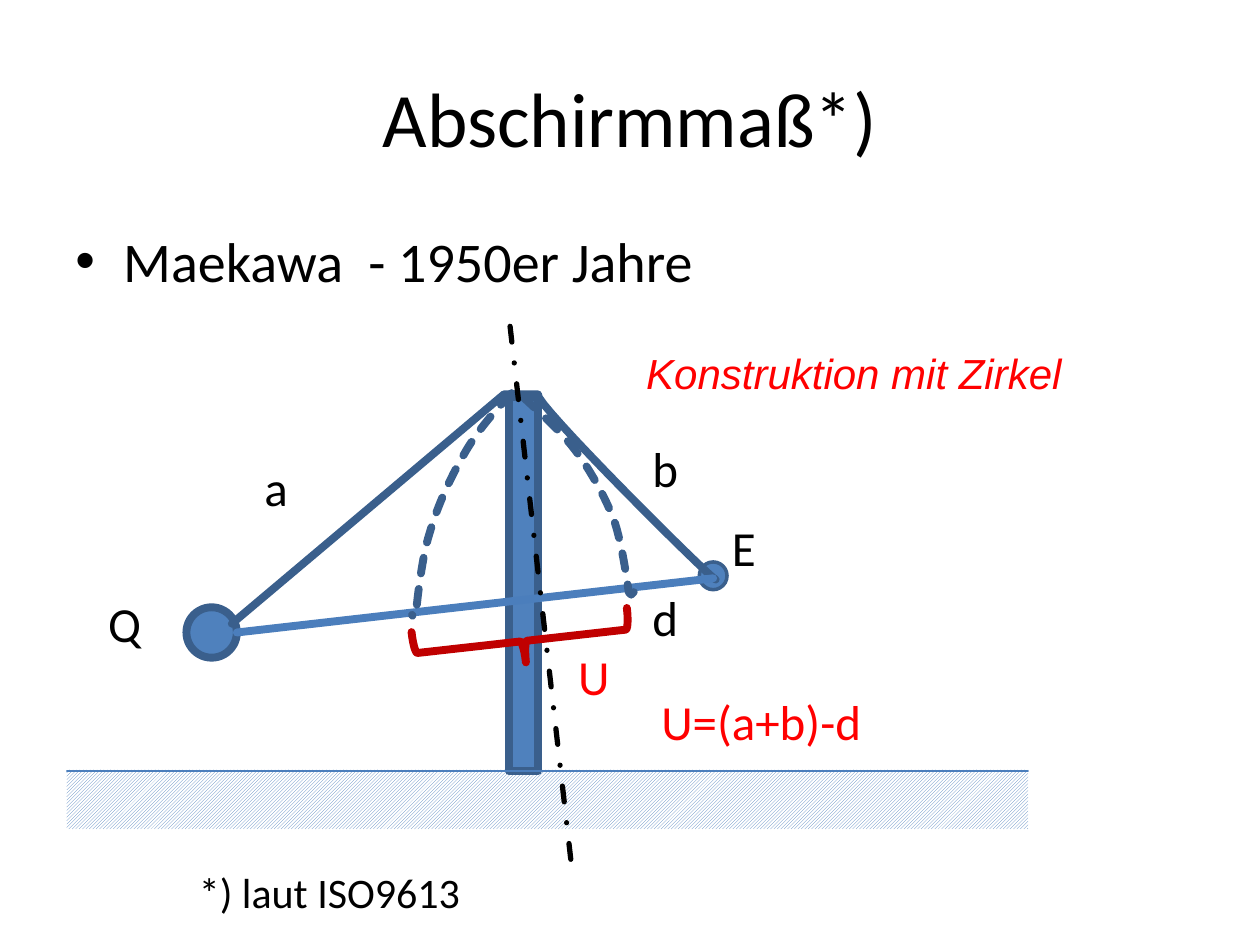
from lxml import etree
from pptx import Presentation
from pptx.dml.color import RGBColor
from pptx.enum import dml, shapes, text
from pptx.oxml import ns
from pptx.util import Inches, Pt

BLACK = RGBColor(0x00, 0x00, 0x00)
WHITE = RGBColor(0xFF, 0xFF, 0xFF)
RED = RGBColor(0xFF, 0x00, 0x00)
DARK_RED = RGBColor(0xC0, 0x00, 0x00)
BLUE = RGBColor(0x4F, 0x81, 0xBD)
LINE_BLUE = RGBColor(0x4B, 0x7E, 0xBC)
EDGE_BLUE = RGBColor(0x3A, 0x5F, 0x8C)

CURVE_STEPS = 16

LABELS = [  # text, left, top, width, format values
    ("Q", 0.76, 4.59, 0.67, {}),
    ("E", 5.71, 3.99, 0.54, {}),
    ("a", 2.0, 3.51, 0.67, {}),
    ("b", 5.08, 3.36, 0.67, {}),
    ("d", 5.08, 4.54, 0.67, {}),
    ("U", 4.49, 5.01, 0.67, {"color": RED}),
    ("U=(a+b)-d", 5.15, 5.37, 2.28, {"color": RED}),
    ("Konstruktion mit Zirkel", 5.03, 2.65, 4.48,
     {"color": RED, "size": 24, "name": "Arial", "italic": True}),
    ("*) laut ISO9613", 1.48, 6.77, 4.48, {"size": 24}),
]

# Each path is a start point followed by segments: one point is a straight
# line, three points are a Bézier curve.
SOUND_PATH = [(1.84, 4.95), [(4, 3.13)], [(4.27, 3.13)],
              [(4.22, 3.18), (5.64, 4.59), (5.68, 4.6)]]
RIGHT_ARC = [(4.15, 3.15), [(4.3, 3.29), (4.45, 3.42), (4.57, 3.58)],
             [(4.69, 3.74), (4.8, 3.94), (4.87, 4.12)],
             [(4.94, 4.31), (4.99, 4.7), (4.99, 4.7)],
             [(5.01, 4.72)], [(5.03, 4.7)]]
LEFT_ARC = [(4.06, 3.12), [(3.92, 3.27), (3.78, 3.43), (3.68, 3.61)],
            [(3.57, 3.8), (3.47, 4.02), (3.41, 4.23)],
            [(3.34, 4.44), (3.3, 4.88), (3.3, 4.88)],
            [(3.28, 4.9)], [(3.27, 4.88)]]


def style_line(line, color, width, dash=None):
    """Colour a line and give it round caps and joins."""
    line.color.rgb = color
    line.width = Pt(width)
    if dash:
        line.dash_style = dash
    ln = line._get_or_add_ln()
    ln.set("cap", "rnd")
    etree.SubElement(ln, ns.qn("a:round"))


def add_text(slide, content, left, top, width, height, size=28,
             color=BLACK, name="Calibri", italic=None):
    """Add a one-paragraph text box and return its frame and paragraph."""
    box = slide.shapes.add_textbox(*map(Inches, (left, top, width, height)))
    frame = box.text_frame
    frame.word_wrap = True
    paragraph = frame.paragraphs[0]
    run = paragraph.add_run()
    run.text = content
    for key, value in {"size": Pt(size), "name": name, "italic": italic}.items():
        setattr(run.font, key, value)
    run.font.color.rgb = color
    return frame, paragraph


def add_title(slide, content):
    frame, paragraph = add_text(slide, content, 0.5, 0.3, 9, 1.25, size=44)
    frame.vertical_anchor = text.MSO_ANCHOR.MIDDLE
    paragraph.alignment = text.PP_ALIGN.CENTER


def add_bullet(slide, content):
    _, paragraph = add_text(slide, content, 0.5, 1.75, 9, 4.95, size=32)
    paragraph.space_before = Pt(6.4)
    properties = paragraph._p.get_or_add_pPr()
    properties.set("marL", str(Inches(0.38)))
    properties.set("indent", str(Inches(-0.38)))
    etree.SubElement(properties, ns.qn("a:buFont"), typeface="Arial")
    etree.SubElement(properties, ns.qn("a:buChar"), char="•")


def add_label(slide, content, left, top, width, formats):
    _, paragraph = add_text(slide, content, left, top, width, 0.7, **formats)
    paragraph.line_spacing = 1.15
    paragraph.space_after = Pt(10)


def add_solid(slide, kind, left, top, width, height, edge=4.5):
    solid = slide.shapes.add_shape(kind, *map(Inches, (left, top, width, height)))
    solid.shadow.inherit = False
    solid.fill.solid()
    solid.fill.fore_color.rgb = BLUE
    style_line(solid.line, EDGE_BLUE, edge)


def add_ground(slide):
    ground = slide.shapes.add_shape(
        shapes.MSO_SHAPE.RECTANGLE, *map(Inches, (0.53, 6.11, 7.63, 0.47)))
    ground.shadow.inherit = False
    ground.fill.patterned()
    ground.fill.pattern = dml.MSO_PATTERN.DARK_UPWARD_DIAGONAL
    ground.fill.fore_color.rgb = BLUE
    ground.fill.back_color.rgb = WHITE
    ground.line.fill.background()


def add_line(slide, start, end, color, width, dash=None):
    connector = slide.shapes.add_connector(
        shapes.MSO_CONNECTOR.STRAIGHT, *map(Inches, (*start, *end)))
    style_line(connector.line, color, width, dash)
    etree.SubElement(connector._element.spPr, ns.qn("a:effectLst"))


def bezier(p0, p1, p2, p3):
    """Return points along a cubic curve, without its start."""
    points = []
    for step in range(1, CURVE_STEPS + 1):
        t = step / CURVE_STEPS
        s = 1 - t
        points.append(tuple(
            s**3 * a + 3 * s * s * t * b + 3 * s * t * t * c + t**3 * d
            for a, b, c, d in zip(p0, p1, p2, p3)))
    return points


def add_curve(slide, path, dash=None):
    start, *segments = path
    points = [start]
    for segment in segments:
        points += bezier(points[-1], *segment) if len(segment) == 3 else segment
    corners = [(Inches(x), Inches(y)) for x, y in points]
    builder = slide.shapes.build_freeform(*corners[0])
    builder.add_line_segments(corners[1:], close=False)
    curve = builder.convert_to_shape()
    curve.shadow.inherit = False
    curve.fill.background()
    style_line(curve.line, EDGE_BLUE, 4.5, dash)


def add_detour_brace(slide):
    brace = slide.shapes.add_shape(
        shapes.MSO_SHAPE.RIGHT_BRACE, *map(Inches, (3.97, 4.23, 0.34, 1.72)))
    brace.rotation = 83.6
    brace.adjustments[0] = 0.083
    brace.adjustments[1] = 0.491
    brace.shadow.inherit = False
    brace.fill.background()
    style_line(brace.line, DARK_RED, 4.5)


def main():
    prs = Presentation()
    prs.slide_width, prs.slide_height = Inches(10), Inches(7.5)
    slide = prs.slides.add_slide(prs.slide_layouts[6])

    add_ground(slide)
    add_title(slide, "Abschirmmaß*)")
    add_bullet(slide, "Maekawa  - 1950er Jahre")

    add_solid(slide, shapes.MSO_SHAPE.RECTANGLE, 4.04, 3.15, 0.23, 2.97)
    add_line(slide, (0.53, 6.12), (8.16, 6.12), LINE_BLUE, 0.75)
    add_solid(slide, shapes.MSO_SHAPE.OVAL, 1.48, 4.82, 0.4, 0.4)
    add_solid(slide, shapes.MSO_SHAPE.OVAL, 5.55, 4.46, 0.22, 0.22, edge=2)

    add_curve(slide, SOUND_PATH)
    add_line(slide, (1.88, 5.02), (5.66, 4.59), LINE_BLUE, 4.5)
    for arc in (RIGHT_ARC, LEFT_ARC):
        add_curve(slide, arc, dml.MSO_LINE.SQUARE_DOT)
    for label in LABELS:
        add_label(slide, *label)

    add_detour_brace(slide)
    add_line(slide, (4.53, 6.82), (4.03, 2.43), BLACK, 3, dml.MSO_LINE.DASH_DOT)
    prs.save("out.pptx")


if __name__ == "__main__":
    main()
